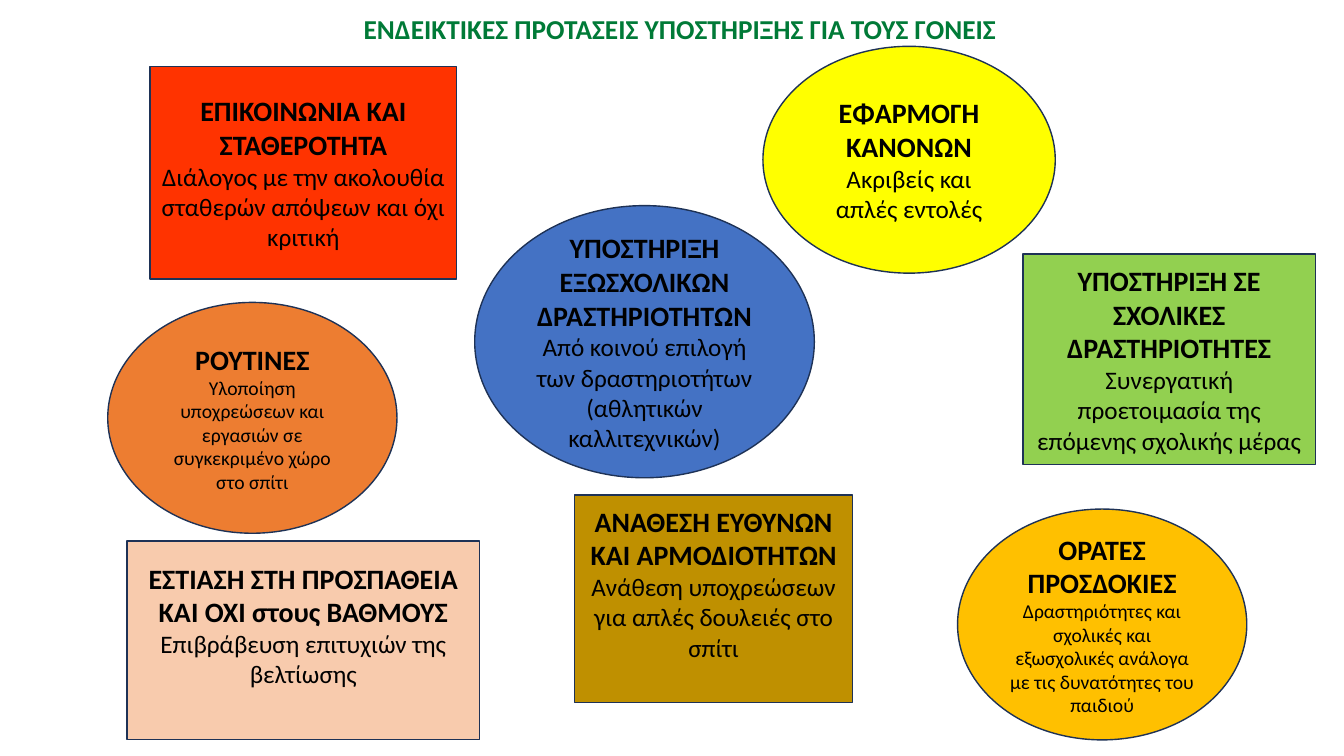
from pptx import Presentation
from pptx.dml.color import RGBColor
from pptx.enum.shapes import MSO_SHAPE
from pptx.enum.text import MSO_ANCHOR, MSO_AUTO_SIZE, PP_ALIGN
from pptx.util import Pt

RECT, OVAL = MSO_SHAPE.RECTANGLE, MSO_SHAPE.OVAL


def color(hex_string):
    return RGBColor.from_string(hex_string)


def format_paragraph(paragraph, size, bold, hex_string):
    paragraph.alignment = PP_ALIGN.CENTER
    font = paragraph.font
    font.name = "Calibri"
    font.size = Pt(size)
    font.bold = bold
    font.color.rgb = color(hex_string)


presentation = Presentation()
presentation.slide_width = Pt(960)
presentation.slide_height = Pt(540)
slide = presentation.slides.add_slide(presentation.slide_layouts[5])

# Suggestions: outline, fill, box, heading, advice, advice size, bottom inset
suggestions = [
    (RECT, "FF3300", (107.3, 47.5, 218.9, 151.9), "ΕΠΙΚΟΙΝΩΝΙΑ ΚΑΙ ΣΤΑΘΕΡΟΤΗΤΑ",
     "Διάλογος με την ακολουθία σταθερών απόψεων και όχι κριτική", 18, 3.6),
    (RECT, "92D050", (730.8, 181.4, 208.8, 150.5), "ΥΠΟΣΤΗΡΙΞΗ ΣΕ ΣΧΟΛΙΚΕΣ ΔΡΑΣΤΗΡΙΟΤΗΤΕΣ",
     "Συνεργατική προετοιμασία της επόμενης σχολικής μέρας", 18, 3.6),
    (OVAL, "ED7D31", (77, 216, 206.6, 164.9), "ΡΟΥΤΙΝΕΣ",
     "Υλοποίηση υποχρεώσεων και εργασιών σε συγκεκριμένο χώρο στο σπίτι", 14, 3.6),
    (RECT, "F8CBAD", (90.7, 386.6, 252, 141.8), "ΕΣΤΙΑΣΗ ΣΤΗ ΠΡΟΣΠΑΘΕΙΑ ΚΑΙ ΌΧΙ στους ΒΑΘΜΟΥΣ",
     "Επιβράβευση επιτυχιών της βελτίωσης", 18, 25.6),
    (OVAL, "FFFF00", (545, 33.1, 208.8, 162), "ΕΦΑΡΜΟΓΗ ΚΑΝΟΝΩΝ",
     "Ακριβείς και απλές εντολές", 18, 3.6),
    (OVAL, "4472C4", (339.1, 146.9, 242.6, 194.4), "ΥΠΟΣΤΗΡΙΞΗ ΕΞΩΣΧΟΛΙΚΩΝ ΔΡΑΣΤΗΡΙΟΤΗΤΩΝ",
     "Από κοινού επιλογή των δραστηριοτήτων (αθλητικών καλλιτεχνικών)", 18, 3.6),
    (RECT, "BF9000", (410.4, 353.5, 198.7, 148.3), "ΑΝΑΘΕΣΗ ΕΥΘΥΝΩΝ ΚΑΙ ΑΡΜΟΔΙΟΤΗΤΩΝ",
     "Ανάθεση υποχρεώσεων για απλές δουλειές στο σπίτι", 18, 25.6),
    (OVAL, "FFC000", (684, 363.6, 206.6, 164.9), "ΟΡΑΤΕΣ ΠΡΟΣΔΟΚΙΕΣ",
     "Δραστηριότητες και σχολικές και εξωσχολικές ανάλογα με τις δυνατότητες του παιδιού", 14, 3.6),
]
for outline, fill, box, heading, advice, advice_size, bottom_inset in suggestions:
    suggestion = slide.shapes.add_shape(outline, *map(Pt, box))
    suggestion.shadow.inherit = False
    suggestion.fill.solid()
    suggestion.fill.fore_color.rgb = color(fill)
    suggestion.line.color.rgb = color("1E3256")
    suggestion.line.width = Pt(1)
    frame = suggestion.text_frame
    frame.word_wrap = True
    frame.vertical_anchor = MSO_ANCHOR.MIDDLE
    frame.margin_bottom = Pt(bottom_inset)
    frame.text = f"{heading}\n{advice}"
    format_paragraph(frame.paragraphs[0], 20, True, "000000")
    format_paragraph(frame.paragraphs[1], advice_size, False, "000000")

# Title
title = slide.shapes.title
title.left, title.top, title.width, title.height = map(Pt, (180, 9.4, 612, 48.2))
title_frame = title.text_frame
title_frame.text = "ΕΝΔΕΙΚΤΙΚΕΣ ΠΡΟΤΑΣΕΙΣ ΥΠΟΣΤΗΡΙΞΗΣ ΓΙΑ ΤΟΥΣ ΓΟΝΕΙΣ"
title_frame.word_wrap = True
title_frame.auto_size = MSO_AUTO_SIZE.NONE
title_frame.vertical_anchor = MSO_ANCHOR.TOP
title_frame.paragraphs[0].line_spacing = 0.8
format_paragraph(title_frame.paragraphs[0], 19.5, True, "007A37")

presentation.save("out.pptx")
